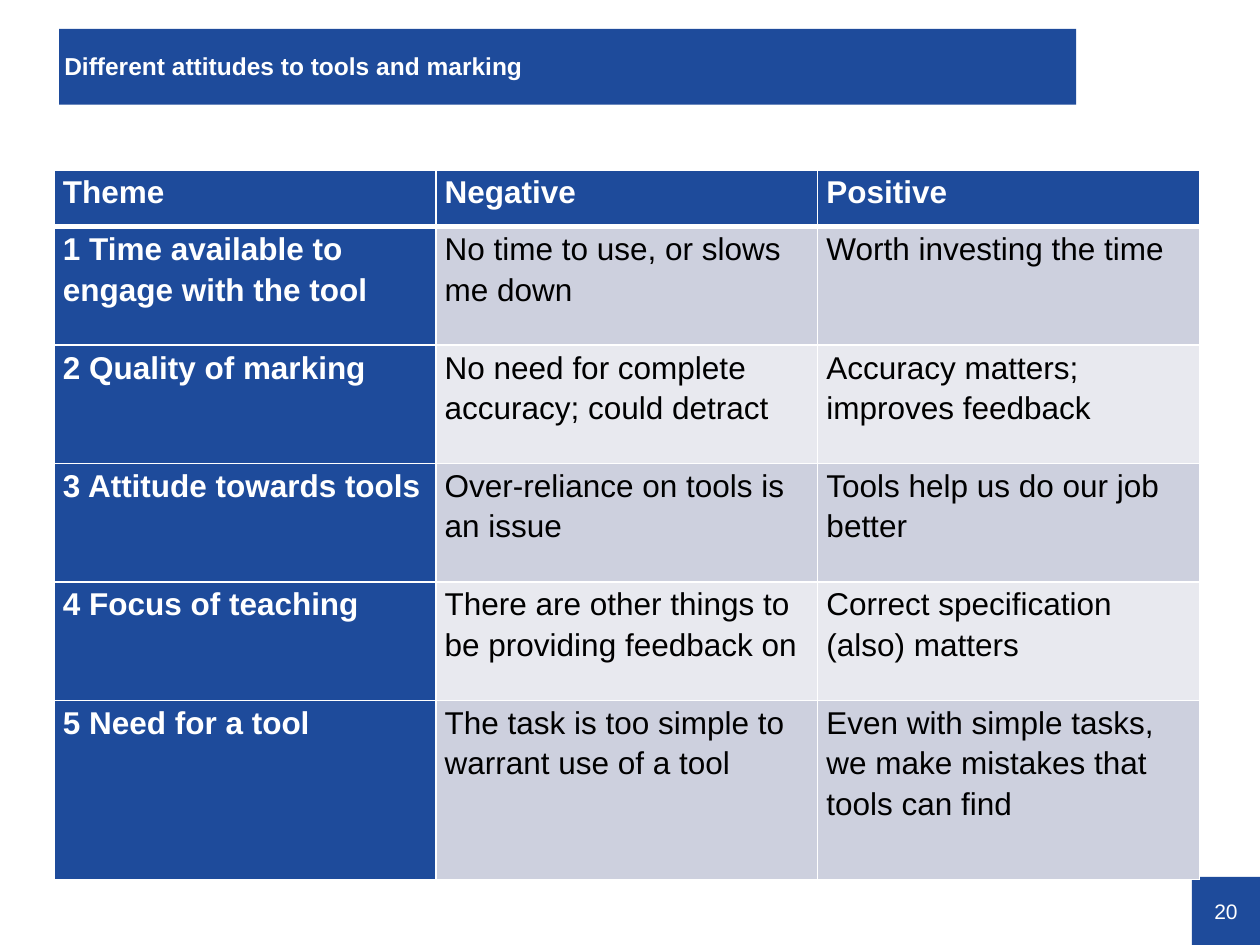
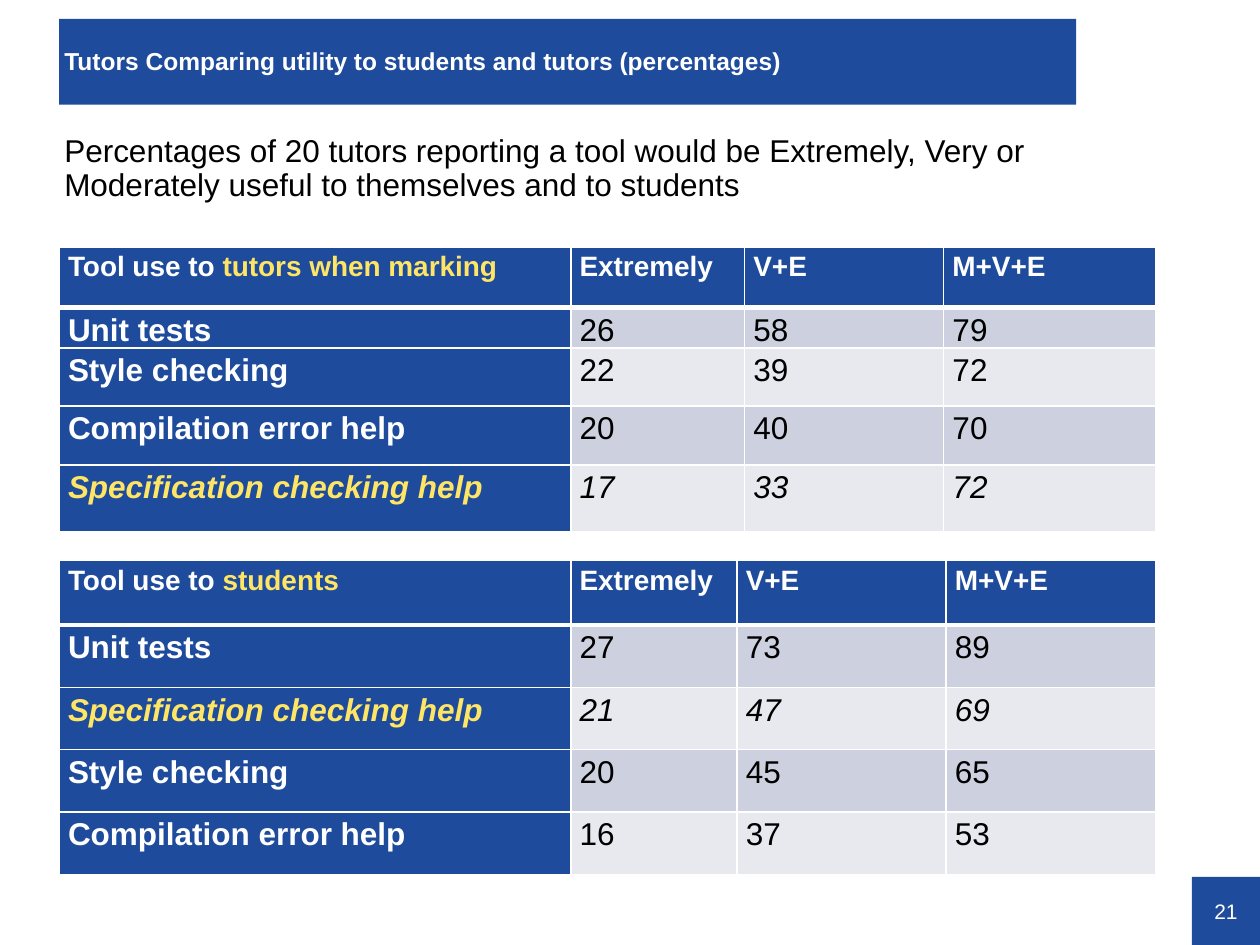
"""Builds two slides of tables on how tutors see marking tools."""
import lxml.etree
import pptx
import pptx.dml.color
import pptx.enum.shapes
import pptx.enum.text
import pptx.oxml.ns
import pptx.util

BLUE = pptx.dml.color.RGBColor(0x1E, 0x4B, 0x9B)
YELLOW = pptx.dml.color.RGBColor(0xFF, 0xE5, 0x66)
WHITE = pptx.dml.color.RGBColor(0xFF, 0xFF, 0xFF)
BLACK = pptx.dml.color.RGBColor(0x00, 0x00, 0x00)
BANDS = (
    pptx.dml.color.RGBColor(0xE8, 0xE9, 0xEF),
    pptx.dml.color.RGBColor(0xCD, 0xD0, 0xDE),
)
GRID_COLUMNS, GRID_ROWS = 100, 75
LEFT = 4.7
TITLE_ONLY, TITLE_AND_BODY = 5, 1
EMPHASISED_TOOL = "Specification checking help"
ALIGN = pptx.enum.text.PP_ALIGN
ANCHOR = pptx.enum.text.MSO_ANCHOR

ATTITUDES = (
    ("Theme", "Negative", "Positive"),
    ("1 Time available to engage with the tool",
     "No time to use, or slows me down", "Worth investing the time"),
    ("2 Quality of marking",
     "No need for complete accuracy; could detract",
     "Accuracy matters; improves feedback"),
    ("3 Attitude towards tools",
     "Over-reliance on tools is an issue", "Tools help us do our job better"),
    ("4 Focus of teaching",
     "There are other things to be providing feedback on",
     "Correct specification (also) matters"),
    ("5 Need for a tool",
     "The task is too simple to warrant use of a tool",
     "Even with simple tasks, we make mistakes that tools can find"),
)
LEVELS = ("Extremely", "V+E", "M+V+E")
STUDENT_USE = (
    (("Tool use to ", "students"), *LEVELS),
    ("Unit tests", "27", "73", "89"),
    (EMPHASISED_TOOL, "21", "47", "69"),
    ("Style checking", "20", "45", "65"),
    ("Compilation error help", "16", "37", "53"),
)
TUTOR_USE = (
    (("Tool use to ", "tutors when marking"), *LEVELS),
    ("Unit tests", "26", "58", "79"),
    ("Style checking", "22", "39", "72"),
    ("Compilation error help", "20", "40", "70"),
    (EMPHASISED_TOOL, "17", "33", "72"),
)


def apply(target, values):
    """Set every named value on the target."""
    for name, value in values.items():
        setattr(target, name, value)


class SlideBuilder:
    """Holds the shared style and the current slide."""

    def __init__(self):
        self.deck = pptx.Presentation()
        apply(self.deck, {"slide_width": pptx.util.Inches(10),
                          "slide_height": pptx.util.Inches(7.5)})
        self.page = None

    def across(self, columns):
        """Turn grid columns into a length."""
        return round(self.deck.slide_width * columns / GRID_COLUMNS)

    def down(self, rows):
        """Turn grid rows into a length."""
        return round(self.deck.slide_height * rows / GRID_ROWS)

    def place(self, left, top, width, height):
        """Give the named lengths of an area on the grid."""
        return {"left": self.across(left), "top": self.down(top),
                "width": self.across(width), "height": self.down(height)}

    def add_spans(self, para, texts, size, colors, bold=False, italic=False):
        """Add one span for each text with its colour."""
        for text, color in zip(texts, colors):
            span = para.add_run()
            span.text = text
            apply(span.font, {"name": "Arial", "size": pptx.util.Pt(size),
                              "bold": bold, "italic": italic})
            span.font.color.rgb = color

    def fill_frame(self, box, text, size, color, margins, anchor,
                   alignment=ALIGN.LEFT, spacing=0.9, bold=False):
        """Format a box that holds a single paragraph."""
        frame = box.text_frame
        names = ("margin_left", "margin_top", "margin_right", "margin_bottom")
        apply(frame, {name: pptx.util.Inches(margin)
                      for name, margin in zip(names, margins)})
        apply(frame, {"word_wrap": True, "vertical_anchor": anchor,
                      "auto_size": pptx.enum.text.MSO_AUTO_SIZE.NONE})
        para = frame.paragraphs[0]
        apply(para, {"alignment": alignment, "line_spacing": spacing,
                     "space_before": pptx.util.Pt(0)})
        self.add_spans(para, [text], size, [color], bold)
        return para

    def paint(self, box):
        """Fill a box with the band colour."""
        box.fill.solid()
        box.fill.fore_color.rgb = BLUE

    def start(self, layout, title, top, height, number):
        """Add a slide with its title band and page number."""
        self.page = self.deck.slides.add_slide(self.deck.slide_layouts[layout])
        band = self.page.shapes.title
        apply(band, self.place(LEFT, top, 80.7, height))
        self.paint(band)
        self.fill_frame(band, title, 14, WHITE, (0.04, 0.02, 0, 0),
                        ANCHOR.MIDDLE, bold=True)
        corner = self.page.shapes.add_shape(
            pptx.enum.shapes.MSO_SHAPE.RECTANGLE,
            **self.place(94.6, 69.6, 5.4, 5.4))
        corner.shadow.inherit = False
        self.paint(corner)
        corner.line.fill.background()
        self.fill_frame(corner, str(number), 12, WHITE, (0, 0, 0, 0),
                        ANCHOR.MIDDLE, ALIGN.CENTER, 1.0)

    def body(self, text, left, top, width, height):
        """Use the body placeholder for plain text without a bullet."""
        box = self.page.placeholders[1]
        apply(box, self.place(left, top, width, height))
        para = self.fill_frame(box, text, 18, BLACK, (0.04,) * 4, ANCHOR.TOP)
        properties = para._p.get_or_add_pPr()
        for name in ("marL", "indent"):
            properties.set(name, "0")
        lxml.etree.SubElement(properties, pptx.oxml.ns.qn("a:buNone"))

    def border(self, cell, row):
        """Draw white cell borders, thicker under the header row."""
        properties = cell._tc.get_or_add_tcPr()
        widths = {"lnL": 1, "lnR": 1, "lnT": 3 if row == 1 else 1,
                  "lnB": 3 if row == 0 else 1}
        for index, (side, width) in enumerate(widths.items()):
            line = lxml.etree.Element(pptx.oxml.ns.qn("a:" + side),
                                      w=str(pptx.util.Pt(width)))
            solid = lxml.etree.SubElement(line, pptx.oxml.ns.qn("a:solidFill"))
            lxml.etree.SubElement(solid, pptx.oxml.ns.qn("a:srgbClr"),
                                  val=str(WHITE))
            properties.insert(index, line)

    def table(self, content, left, top, widths, heights, header_size=18):
        """Add a banded table with a coloured header row and first column."""
        area = self.place(left, top, sum(widths), sum(heights))
        table = self.page.shapes.add_table(
            len(heights), len(widths), **area).table
        for column, width in zip(table.columns, widths):
            column.width = self.across(width)
        for row, (texts, height) in enumerate(zip(content, heights)):
            table.rows[row].height = self.down(height)
            emphasised = texts[0] == EMPHASISED_TOOL
            for column, text in enumerate(texts):
                cell = table.cell(row, column)
                heading = row == 0 or column == 0
                apply(cell, {"margin_left": pptx.util.Inches(0.07),
                             "margin_right": pptx.util.Inches(0.07),
                             "margin_top": 0, "margin_bottom": 0})
                cell.fill.solid()
                cell.fill.fore_color.rgb = BLUE if heading else BANDS[row % 2]
                self.border(cell, row)
                para = cell.text_frame.paragraphs[0]
                para.line_spacing = 1.15
                spans = [text] if isinstance(text, str) else text
                first = WHITE if heading else BLACK
                if emphasised and heading:
                    first = YELLOW
                self.add_spans(para, spans, 18 if row else header_size,
                               (first, YELLOW), heading, emphasised)


def main():
    """Build both slides and save the deck."""
    builder = SlideBuilder()
    builder.start(TITLE_ONLY, "Different attitudes to tools and marking",
                  2.3, 6, 20)
    builder.table(ATTITUDES, 4.3, 13.5, [30.3] * 3, [4.5] + [9.4] * 4 + [14.2])

    builder.start(TITLE_AND_BODY,
                  "Tutors Comparing utility to students and tutors (percentages)",
                  1.5, 6.8, 21)
    builder.table(STUDENT_USE, LEFT, 44.5, [40.6, 13.2, 16.6, 16.6],
                  [5.1] + [4.95] * 4, 16)
    builder.table(TUTOR_USE, LEFT, 19.6, [40.6, 13.8, 15.8, 16.8],
                  [4.8, 3.2, 4.6, 4.7, 5.3], 16)
    builder.body("Percentages of 20 tutors reporting a tool would be Extremely, "
                 "Very or Moderately useful to themselves and to students",
                 LEFT, 10.3, 86.1, 5.4)
    builder.deck.save("out.pptx")


if __name__ == "__main__":
    main()
